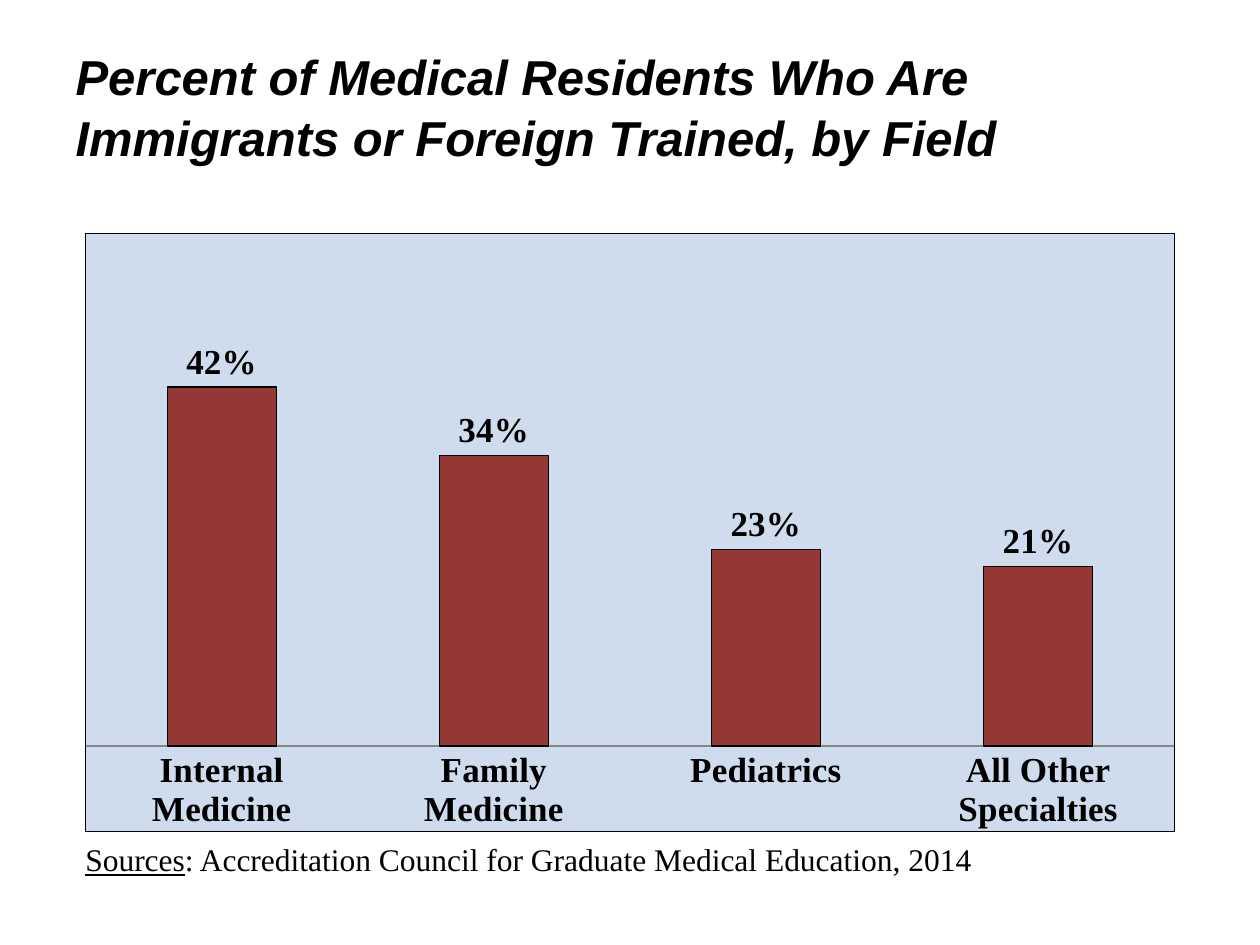
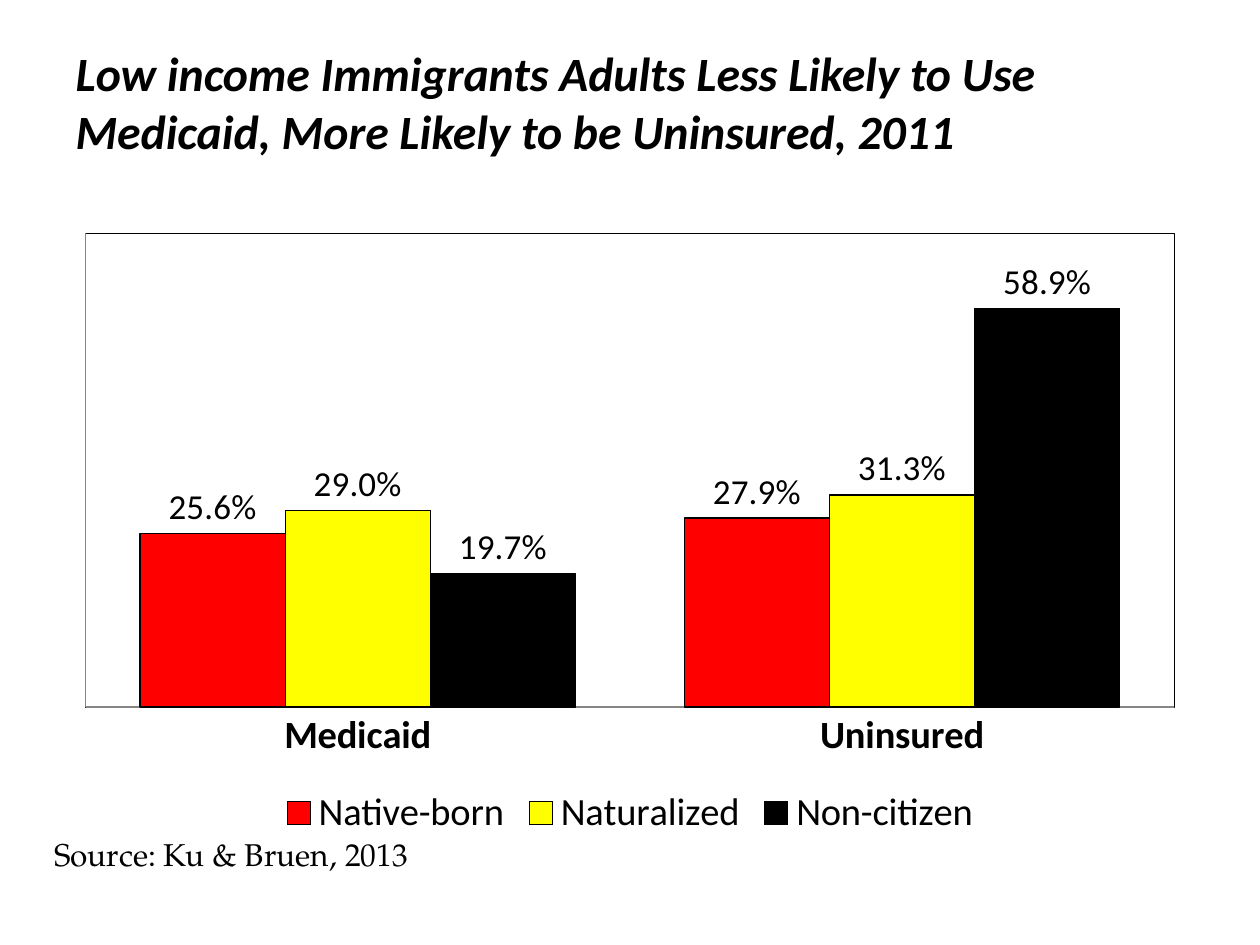
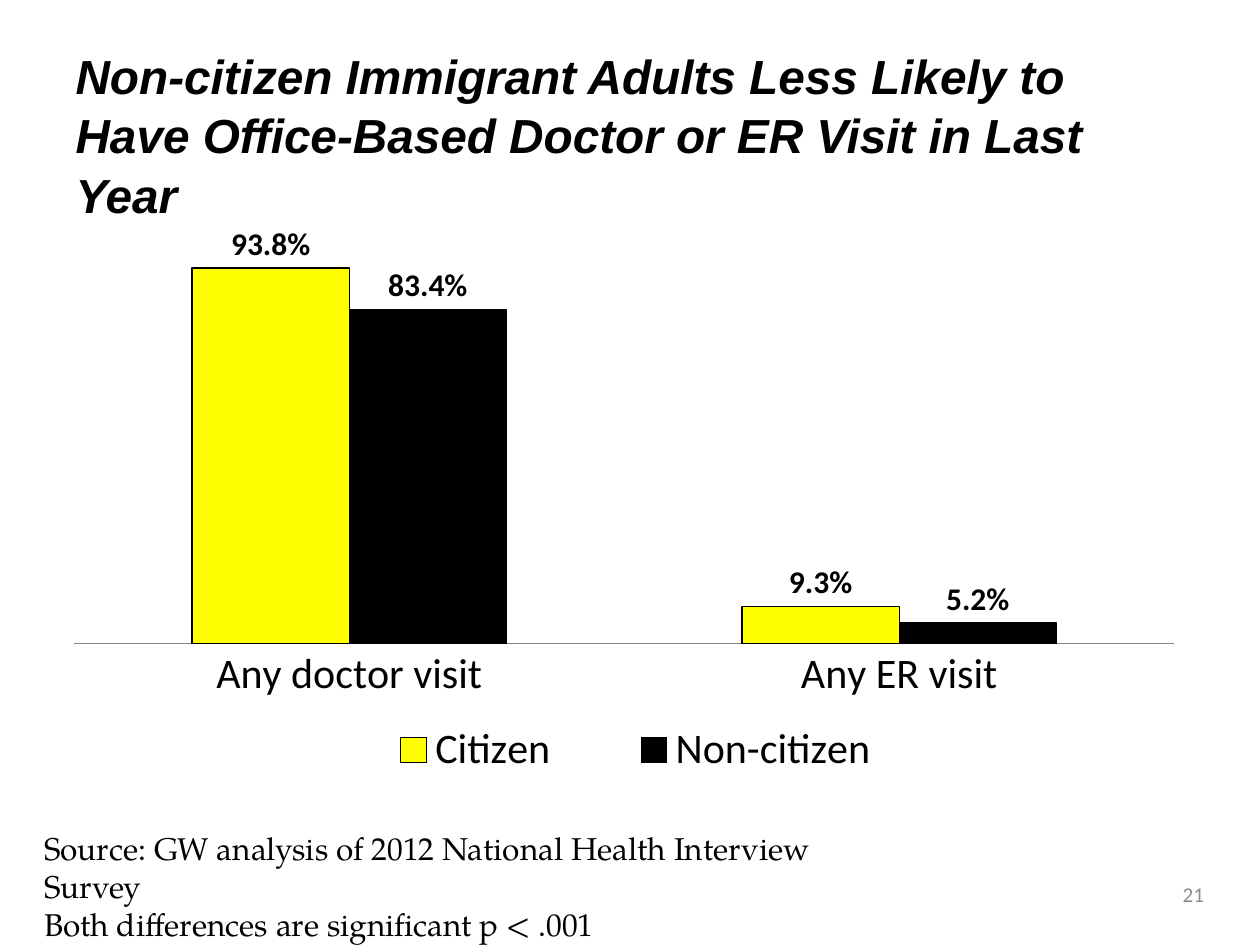
from lxml import etree
from pptx import Presentation
from pptx import util as u
from pptx.chart.data import CategoryChartData
from pptx.dml.color import RGBColor
from pptx.enum import chart as charts, text
from pptx.oxml import parse_xml
from pptx.oxml.ns import nsdecls, qn

COLOURS = {
    "black": "000000",
    "brick": "953735",
    "red": "FF0000",
    "yellow": "FFFF00",
    "sky": "B9CDE5",
    "axis": "868686",
    "number": "8C8C8C",
}
SERIF, SANS, HEAD, BOOK = "Times New Roman", "Calibri", "Arial", "TeX Gyre Pagella"
TITLE_ONLY = 5
CHART_AREA = (1.27, 4.45, 22.86, 12.57)


def colour(name):
    return RGBColor.from_string(COLOURS[name])


def apply(target, values):
    for name, value in values.items():
        setattr(target, name, value)


def style(font, size, name=SANS, shade="black", **values):
    apply(font, {"size": u.Pt(size), "name": name, **values})
    font.color.rgb = colour(shade)


def place(shape, area):
    sides = ("left", "top", "width", "height")
    apply(shape, {side: u.Cm(length) for side, length in zip(sides, area)})


def outline(line, shade):
    line.color.rgb = colour(shade)
    line.width = u.Pt(0.75)


def layout(area, inner=False):
    root = parse_xml(f"<c:layout {nsdecls('c')}><c:manualLayout/></c:layout>")
    settings = [("layoutTarget", "inner")] if inner else []
    settings += [("xMode", "edge"), ("yMode", "edge"), *zip("xywh", area)]
    for tag, value in settings:
        etree.SubElement(root[0], qn(f"c:{tag}")).set("val", str(value))
    return root


class Slides:
    def __init__(self):
        self.deck = Presentation()
        apply(self.deck, {"slide_width": u.Cm(25.4), "slide_height": u.Cm(19.05)})
        self.page = None

    def start(self, title, size, font=HEAD, spacing=1.04):
        self.page = self.deck.slides.add_slide(self.deck.slide_layouts[TITLE_ONLY])
        box = self.page.shapes.title
        place(box, (1.27, 0.76, 22.86, 3.18))
        box.text_frame.text = title
        apply(box.text_frame, {
            "word_wrap": True,
            "auto_size": text.MSO_AUTO_SIZE.NONE,
            "vertical_anchor": text.MSO_ANCHOR.TOP,
        })
        para = box.text_frame.paragraphs[0]
        apply(para, {"alignment": text.PP_ALIGN.LEFT, "line_spacing": spacing})
        style(para.runs[0].font, size, font, bold=True, italic=True)

    def note(self, area, lines, font=BOOK, size=18, shade="black",
             align=text.PP_ALIGN.LEFT, anchor=text.MSO_ANCHOR.TOP):
        box = self.page.shapes.add_textbox(0, 0, 0, 0)
        place(box, area)
        frame = box.text_frame
        apply(frame, {"word_wrap": True, "vertical_anchor": anchor})
        for index, spans in enumerate(lines):
            para = frame.add_paragraph() if index else frame.paragraphs[0]
            para.alignment = align
            for words, values in spans:
                span = para.add_run()
                span.text = words
                style(span.font, size, font, shade, **values)

    def chart(self, area, categories, series, plot_area, limits, labels, category_font,
              number_format="0.0%", gap=150):
        data = CategoryChartData(number_format=number_format)
        data.categories = categories
        for name, values, _ in series:
            data.add_series(name, values)
        frame = self.page.shapes.add_chart(
            charts.XL_CHART_TYPE.COLUMN_CLUSTERED, 0, 0, u.Cm(1), u.Cm(1), data)
        place(frame, area)
        chart = frame.chart
        apply(chart, {"has_title": False, "has_legend": False})
        style(chart.font, 18)

        plot = chart.plots[0]
        apply(plot, {"gap_width": gap, "overlap": 0, "vary_by_categories": False,
                     "has_data_labels": True})
        apply(plot.data_labels, {
            "show_value": True,
            "number_format": number_format,
            "number_format_is_linked": False,
            "position": charts.XL_LABEL_POSITION.OUTSIDE_END,
        })
        style(plot.data_labels.font, **labels)
        for column, (_, _, shade) in zip(plot.series, series):
            column.format.fill.solid()
            column.format.fill.fore_color.rgb = colour(shade)
            outline(column.format.line, "black")

        bare = {
            "has_major_gridlines": False,
            "major_tick_mark": charts.XL_TICK_MARK.NONE,
            "minor_tick_mark": charts.XL_TICK_MARK.NONE,
        }
        low, high = limits
        apply(chart.category_axis, bare)
        apply(chart.value_axis, {
            **bare, "minimum_scale": low, "maximum_scale": high, "visible": False})
        outline(chart.category_axis.format.line, "axis")
        style(chart.category_axis.tick_labels.font, **category_font)

        root = plot._element.getparent()
        for old in root.findall(qn("c:layout")):
            root.remove(old)
        root.insert(0, layout(plot_area, inner=True))
        return chart

    def frame_plot(self, chart, fill="<a:noFill/>"):
        root = chart.plots[0]._element.getparent()
        root.append(parse_xml(
            f"<c:spPr {nsdecls('c', 'a')}>{fill}<a:ln w='9525'><a:solidFill>"
            f"<a:srgbClr val='{COLOURS['black']}'/></a:solidFill></a:ln></c:spPr>"))

    def legend(self, chart, size, area=None):
        chart.has_legend = True
        legend = chart.legend
        apply(legend, {"position": charts.XL_LEGEND_POSITION.BOTTOM,
                       "include_in_layout": False})
        style(legend.font, size)
        if area:
            root = legend._element
            for old in root.findall(qn("c:layout")):
                root.remove(old)
            root.find(qn("c:legendPos")).addnext(layout(area))


def residents(slides):
    slides.start("Percent of Medical Residents Who Are Immigrants or Foreign Trained, "
                 "by Field", 28)
    bold = {"size": 20, "name": SERIF, "bold": True}
    chart = slides.chart(
        CHART_AREA,
        ["Internal\nMedicine", "Family\nMedicine", "Pediatrics", "All Other Specialties"],
        [("Series 1", (0.42, 0.34, 0.23, 0.21), "brick")],
        (0.02, 0.02, 0.96, 0.96), (-0.1, 0.6), bold, bold, number_format="0%")
    slides.frame_plot(chart, f"<a:solidFill><a:srgbClr val='{COLOURS['sky']}'>"
                             "<a:alpha val='69000'/></a:srgbClr></a:solidFill>")
    slides.note((1.47, 16.81, 18.57, 1.02), [[
        ("Sources", {"underline": True}),
        (": Accreditation Council for Graduate Medical Education, 2014", {}),
    ]], SERIF)


def coverage(slides):
    slides.start("Low income Immigrants Adults Less Likely to Use Medicaid, More Likely "
                 "to be Uninsured, 2011", 27.3, SANS, 1.0)
    chart = slides.chart(
        CHART_AREA, ["Medicaid", "Uninsured"],
        [("Native-born", (0.256, 0.279), "red"),
         ("Naturalized", (0.29, 0.313), "yellow"),
         ("Non-citizen", (0.197, 0.589), "black")],
        (0.02, 0.02, 0.96, 0.76), (0, 0.7), {"size": 20, "bold": False},
        {"size": 22, "bold": True}, gap=75)
    apply(chart.value_axis, {
        "visible": True, "tick_label_position": charts.XL_TICK_LABEL_POSITION.NONE})
    outline(chart.value_axis.format.line, "axis")
    slides.frame_plot(chart)
    slides.legend(chart, 22)
    slides.note((0.84, 16.71, 8.38, 1.02), [[("Source: Ku & Bruen, 2013", {})]])


def visits(slides):
    slides.start("Non-citizen Immigrant Adults Less Likely to Have Office-Based Doctor "
                 "or ER Visit in Last Year", 27.3)
    chart = slides.chart(
        (1.27, 2.77, 22.86, 15.24), ["Any doctor visit", "Any ER visit"],
        [("Citizen", (0.938, 0.093), "yellow"),
         ("Non-citizen", (0.834, 0.052), "black")],
        (0.01, 0.14, 0.97, 0.53), (0, 1), {"size": 18, "bold": True},
        {"size": 24, "bold": False})
    slides.legend(chart, 24, (0.23, 0.77, 0.55, 0.08))
    slides.note((0.64, 16.59, 17.5, 1.8), [
        [("Source: GW analysis of 2012 National Health Interview Survey", {})],
        [("Both differences are significant p < .001", {})],
    ])
    slides.note((22.89, 17.65, 1.63, 0.76), [[("21", {})]], SANS, 12, "number",
                text.PP_ALIGN.RIGHT, text.MSO_ANCHOR.MIDDLE)


def main():
    slides = Slides()
    for build in (residents, coverage, visits):
        build(slides)
    slides.deck.save("out.pptx")


if __name__ == "__main__":
    main()
